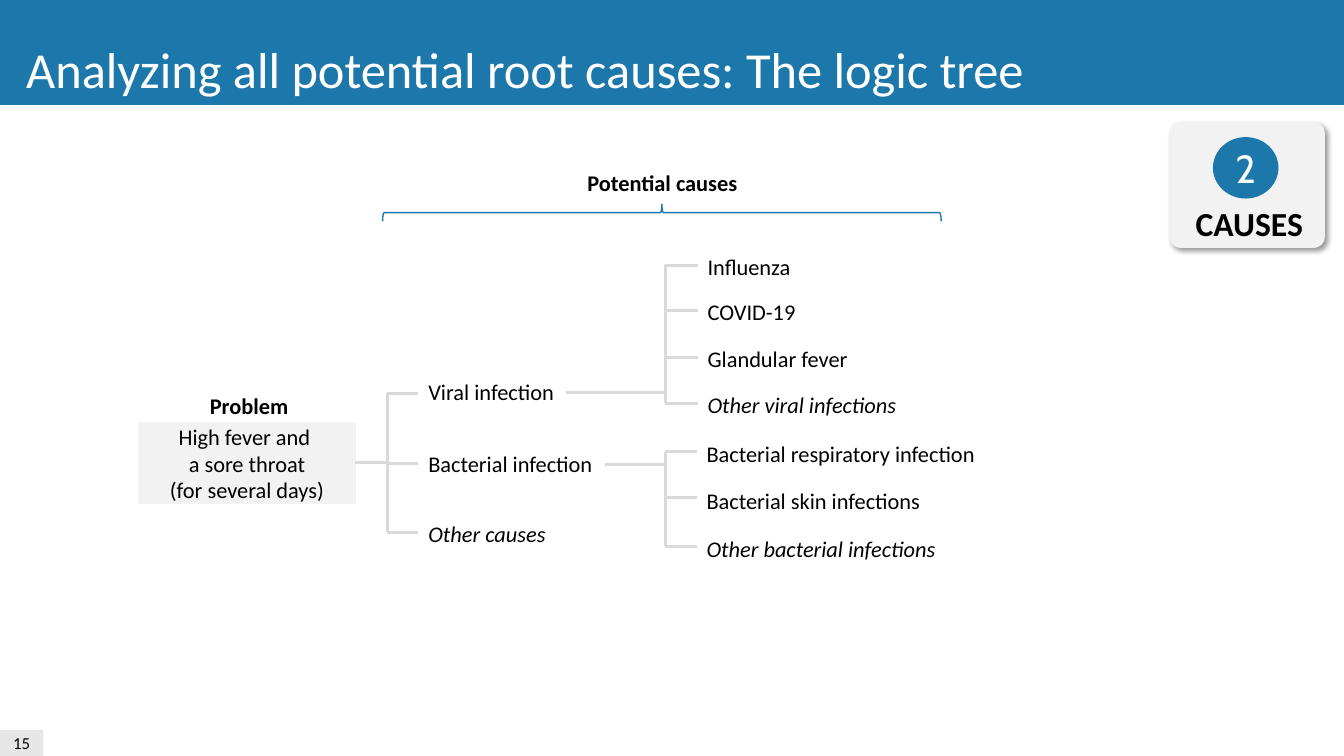
from dataclasses import dataclass

from lxml.etree import SubElement
from pptx import Presentation
from pptx.dml.color import RGBColor
from pptx.enum.shapes import MSO_CONNECTOR as Link, MSO_SHAPE as Form
from pptx.enum.text import MSO_ANCHOR as Anchor, MSO_AUTO_SIZE as Fit, PP_ALIGN as Align
from pptx.oxml.ns import qn
from pptx.util import Pt

PX = 9144  # 100 px to the inch


@dataclass(frozen=True)
class Theme:
    blue: str = "1C78AB"
    card: str = "F2F2F2"
    footer: str = "E7E6E6"
    branch: str = "D9D9D9"
    ink: str = "000000"
    white: str = "FFFFFF"
    font: str = "Calibri"
    number_font: str = "Cabin"
    title: int = 36
    number: int = 28
    badge: int = 24
    body: int = 16
    small: int = 12


class Painter:
    def __init__(self, slide, theme):
        self.slide, self.theme = slide, theme

    def add_text(self, frame, text, size=None, color=None, font=None, align=Align.LEFT,
                 bold=False, italic=False):
        """Fill a frame: each line is a paragraph, a vertical tab is a line break."""
        for index, line in enumerate(text.split("\n")):
            paragraph = frame.paragraphs[0] if index == 0 else frame.add_paragraph()
            paragraph.alignment = align
            for part, words in enumerate(line.split("\v")):
                if part:
                    paragraph.add_line_break()
                run = paragraph.add_run()
                run.text = words
                run.font.name = font or self.theme.font
                run.font.size = Pt(size or self.theme.body)
                run.font.color.rgb = RGBColor.from_string(color or self.theme.ink)
                run.font.bold, run.font.italic = bold, italic

    def title(self, text, *box):
        holder = self.slide.shapes.title
        holder.left, holder.top, holder.width, holder.height = (n * PX for n in box)
        frame = holder.text_frame
        frame.word_wrap, frame.auto_size = False, Fit.SHAPE_TO_FIT_TEXT
        frame.vertical_anchor = Anchor.TOP
        self.add_text(frame, text, self.theme.title, self.theme.white)

    def shape(self, form, *box, fill=None, line=None, text=None, **style):
        shape = self.slide.shapes.add_shape(form, *(n * PX for n in box))
        shape.shadow.inherit = False
        if fill:
            shape.fill.solid()
            shape.fill.fore_color.rgb = RGBColor.from_string(fill)
        else:
            shape.fill.background()
        if line:
            shape.line.color.rgb = RGBColor.from_string(line)
            shape.line.width = Pt(1)
        else:
            shape.line.fill.background()
        if text:
            shape.text_frame.vertical_anchor = Anchor.MIDDLE
            self.add_text(shape.text_frame, text, align=Align.CENTER, **style)
        return shape

    def drop_shadow(self, shape):
        effects = shape._element.spPr.find(qn("a:effectLst"))
        shadow = SubElement(effects, qn("a:outerShdw"), blurRad=str(Pt(4)), dist=str(Pt(3)),
                            dir="2700000", algn="tl", rotWithShape="0")
        color = SubElement(shadow, qn("a:srgbClr"), val=self.theme.ink)
        SubElement(color, qn("a:alpha"), val="40000")

    def label(self, text, *box, wrap=False, **style):
        frame = self.slide.shapes.add_textbox(*(n * PX for n in box)).text_frame
        frame.word_wrap, frame.auto_size = wrap, Fit.SHAPE_TO_FIT_TEXT
        self.add_text(frame, text, **style)

    def line(self, *ends):
        line = self.slide.shapes.add_connector(Link.STRAIGHT, *(n * PX for n in ends))
        line.line.color.rgb = RGBColor.from_string(self.theme.branch)
        line.line.width = Pt(2.25)
        SubElement(line._element.spPr, qn("a:effectLst"))

    def fork(self, start, start_y, trunk, end, causes):
        """Feed a trunk from the left and give each cause a stub and a label."""
        self.line(start, start_y, trunk, start_y)
        self.line(trunk, causes[0][1], trunk, causes[-1][1])
        for text, stub_y, top, width in causes:
            self.line(trunk, stub_y, end, stub_y)
            self.label(text, end, top, width, 37, italic=text.startswith("Other"))


# Cause, height of its stub, top and width of its label
MAIN_CAUSES = [("Viral infection", 390, 370, 146),
               ("Bacterial infection", 460, 442, 185),
               ("Other causes", 528, 511, 138)]
VIRAL_CAUSES = [("Influenza", 263, 246, 103),
                ("COVID-19", 308, 291, 108),
                ("Glandular fever", 355, 337, 161),
                ("Other viral infections", 400, 383, 210)]
BACTERIAL_CAUSES = [("Bacterial respiratory infection", 448, 432, 290),
                    ("Bacterial skin infections", 494, 478, 240),
                    ("Other bacterial infections", 542, 526, 250)]


def main():
    deck = Presentation()
    deck.slide_width, deck.slide_height = 1333 * PX, 750 * PX
    slide = deck.slides.add_slide(deck.slide_layouts[5])
    theme = Theme()
    paint = Painter(slide, theme)

    # Header band behind the title, and page number
    band = paint.shape(Form.RECTANGLE, 0, -1, 1334, 105, fill=theme.blue)
    slide.shapes.title._element.addprevious(band._element)
    paint.title("Analyzing all potential root causes: The logic tree", 16, 33, 1031, 71)
    paint.shape(Form.RECTANGLE, 0, 724, 43, 26, fill=theme.footer, text="15", size=theme.small)

    # Step badge
    badge = paint.shape(Form.ROUNDED_RECTANGLE, 1160, 121, 154, 125, fill=theme.card)
    badge.adjustments[0] = 0.09
    paint.drop_shadow(badge)
    paint.shape(Form.OVAL, 1203, 136, 65, 61, fill=theme.blue, text="2",
                size=theme.number, color=theme.white, font=theme.number_font)
    paint.label("CAUSES", 1176, 196, 128, 50, size=theme.badge, bold=True)

    # Problem
    paint.shape(Form.RECTANGLE, 137, 419, 216, 81, fill=theme.card,
                text="High fever and \va sore throat\n(for several days)")

    # Logic tree
    paint.fork(352, 459, 384, 415, MAIN_CAUSES)
    paint.fork(561, 389, 660, 692, VIRAL_CAUSES)
    paint.fork(600, 461, 660, 691, BACTERIAL_CAUSES)

    # Headings and brace
    for heading, left, top in (("Problem", 160, 384), ("Potential causes", 570, 163)):
        paint.label(heading, left, top, 174, 37, wrap=True, align=Align.CENTER, bold=True)
    brace = paint.shape(Form.RIGHT_BRACE, 648, -66, 17, 554, line=theme.blue)
    brace.rotation = 270

    deck.save("out.pptx")


if __name__ == "__main__":
    main()
